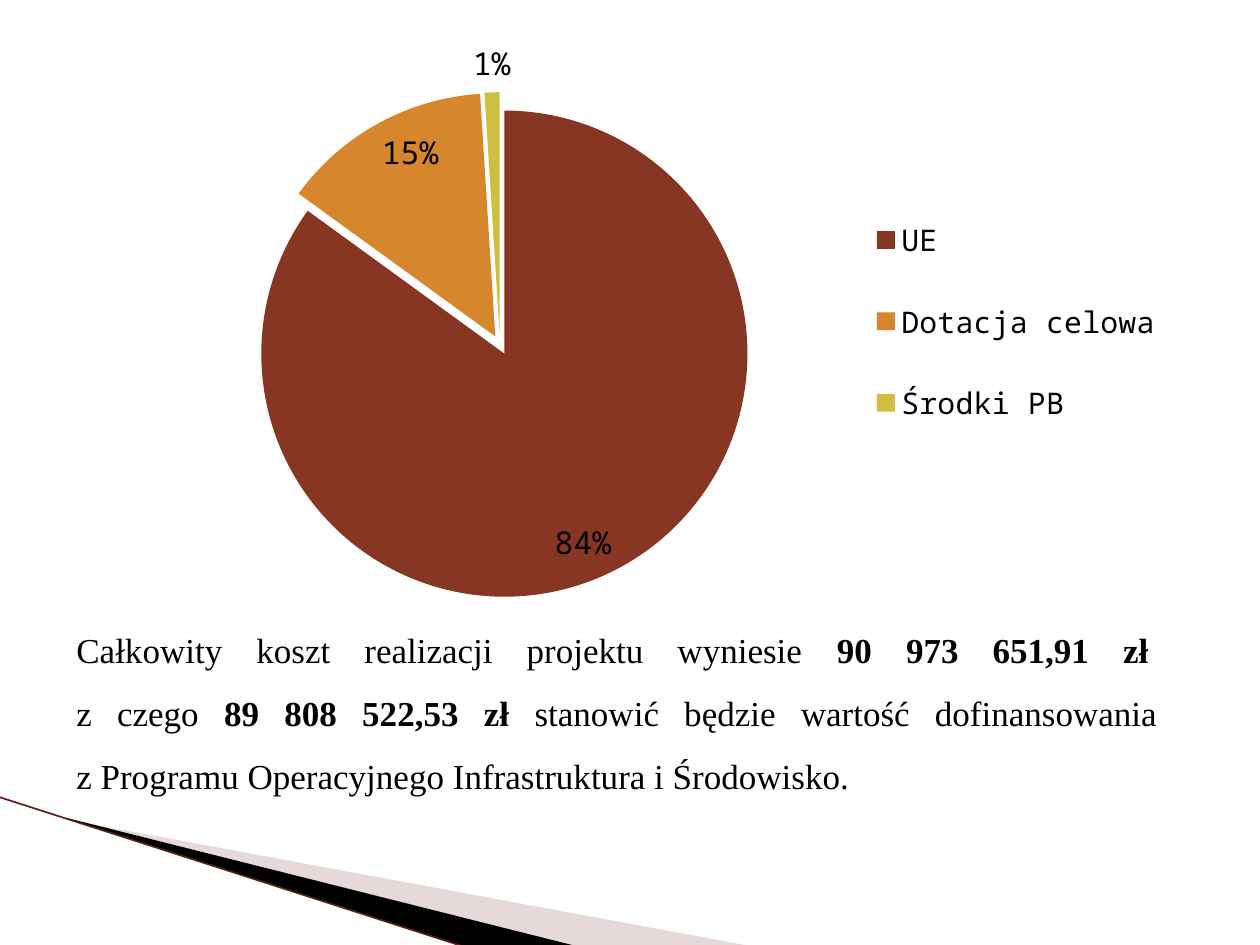
from dataclasses import dataclass

from lxml import etree
from pptx import Presentation
from pptx.chart.data import CategoryChartData
from pptx.dml.color import RGBColor
from pptx.enum.chart import XL_CHART_TYPE, XL_LABEL_POSITION, XL_LEGEND_POSITION
from pptx.enum.shapes import MSO_CONNECTOR
from pptx.enum.text import PP_ALIGN
from pptx.oxml import parse_xml
from pptx.oxml.ns import nsdecls, qn
from pptx.util import Emu, Pt

PX = 914400 / 126


@dataclass(frozen=True)
class Theme:
    text: RGBColor = RGBColor(0x00, 0x00, 0x00)
    pale_wedge: RGBColor = RGBColor(0xBF, 0xA4, 0xA1)
    dark_wedge: RGBColor = RGBColor(0x00, 0x00, 0x00)
    edge: RGBColor = RGBColor(0x5A, 0x22, 0x16)
    slices: tuple = ("873624", "D6862D", "D0BE40")
    chart_font: str = "Noto Sans Mono"
    body_font: str = "Times New Roman"
    label_size: Pt = Pt(18)
    legend_size: Pt = Pt(17)
    body_size: Pt = Pt(20)


theme = Theme()


def px(*lengths):
    return [Emu(round(length * PX)) for length in lengths]


def manual_layout(x, y, width, height, inner=False):
    """Return a c:layout element; the values are fractions of the chart."""
    target = '<c:layoutTarget val="inner"/>' if inner else ""
    return parse_xml(
        f'<c:layout {nsdecls("c")}><c:manualLayout>{target}'
        '<c:xMode val="edge"/><c:yMode val="edge"/>'
        f'<c:x val="{x}"/><c:y val="{y}"/><c:w val="{width}"/><c:h val="{height}"/>'
        '</c:manualLayout></c:layout>'
    )


presentation = Presentation()
presentation.slide_width, presentation.slide_height = px(1260, 945)
slide = presentation.slides.add_slide(presentation.slide_layouts[6])

# Corner decoration
wedges = [
    ([(69, 820), (750, 946), (575, 946), (69, 819)], theme.pale_wedge, 40),
    ([(67, 818), (576, 946), (469, 948), (68, 819)], theme.dark_wedge, 100),
]
for points, color, opacity in wedges:
    builder = slide.shapes.build_freeform(*points[0], scale=PX)
    builder.add_line_segments(points[1:], close=True)
    wedge = builder.convert_to_shape()
    wedge.shadow.inherit = False
    wedge.fill.solid()
    wedge.fill.fore_color.rgb = color
    wedge.line.fill.background()
    if opacity < 100:
        color_element = wedge.fill._xPr.find(qn("a:solidFill"))[0]
        etree.SubElement(color_element, qn("a:alpha"), val=str(opacity * 1000))

edge = slide.shapes.add_connector(MSO_CONNECTOR.STRAIGHT, *px(-1, 797, 468, 948))
edge.line.color.rgb = theme.edge
edge.line.width = Pt(0.95)
etree.SubElement(edge._element.spPr, qn("a:effectLst"))

# Funding shares
chart_data = CategoryChartData(number_format="0%")
chart_data.categories = ["UE", "Dotacja celowa", "Środki PB"]
chart_data.add_series("Series 1", (0.85, 0.14, 0.01))
chart = slide.shapes.add_chart(
    XL_CHART_TYPE.PIE, *px(144, 26, 1032, 591), chart_data
).chart
chart.has_title = False
chart.font.name = theme.chart_font
chart.font.size = theme.label_size
chart.font.color.rgb = theme.text

chart.has_legend = True
legend = chart.legend
legend.position = XL_LEGEND_POSITION.RIGHT
legend.include_in_layout = False
legend.font.size = theme.legend_size
legend.font.name = theme.chart_font
legend.font.color.rgb = theme.text
legend_element = legend._element
for layout in legend_element.findall(qn("c:layout")):
    legend_element.remove(layout)
legend_element.find(qn("c:legendPos")).addnext(manual_layout(0.7, 0.26, 0.29, 0.48))

plot_area = chart._chartSpace.chart.plotArea
for layout in plot_area.findall(qn("c:layout")):
    plot_area.remove(layout)
plot_area.insert(0, manual_layout(0.1, 0.11, 0.49, 0.86, inner=True))

plot = chart.plots[0]
plot.vary_by_categories = True
series = plot.series[0]
for index, color in enumerate(theme.slices):
    slice_format = series.points[index].format
    slice_format.fill.solid()
    slice_format.fill.fore_color.rgb = RGBColor.from_string(color)
    slice_format.line.fill.background()
explosion = parse_xml(f'<c:explosion {nsdecls("c")} val="4"/>')
series._element.find(qn("c:dPt")).addprevious(explosion)

labels = series.data_labels
labels.show_value = True
labels.number_format = "0%"
labels.number_format_is_linked = False
labels.position = XL_LABEL_POSITION.OUTSIDE_END
labels.font.name = theme.chart_font
labels.font.size = theme.label_size
labels.font.color.rgb = theme.text
for index, text in enumerate(("84%", "15%")):
    label = series.points[index].data_label
    label.text_frame.text = text
    font = label.text_frame.paragraphs[0].runs[0].font
    font.name = theme.chart_font
    font.size = theme.label_size
    font.color.rgb = theme.text
    label.position = XL_LABEL_POSITION.INSIDE_END

# Cost statement
text_frame = slide.shapes.add_textbox(*px(64, 601, 1131, 267)).text_frame
text_frame.word_wrap = True
paragraph = text_frame.paragraphs[0]
paragraph.alignment = PP_ALIGN.JUSTIFY
paragraph.line_spacing = 1.5
paragraph.font.name = theme.body_font
paragraph.font.size = theme.body_size
paragraph.font.color.rgb = theme.text
cost_lines = [
    [("Całkowity koszt realizacji projektu wyniesie ", False), ("90 973 651,91 zł ", True)],
    [("z czego ", False), ("89 808 522,53 zł ", True),
     ("stanowić będzie wartość dofinansowania ", False)],
    [("z Programu Operacyjnego Infrastruktura i Środowisko.", False)],
]
for number, cost_line in enumerate(cost_lines):
    if number:
        paragraph.add_line_break()
    for text, bold in cost_line:
        run = paragraph.add_run()
        run.text = text
        run.font.bold = bold

presentation.save("out.pptx")
